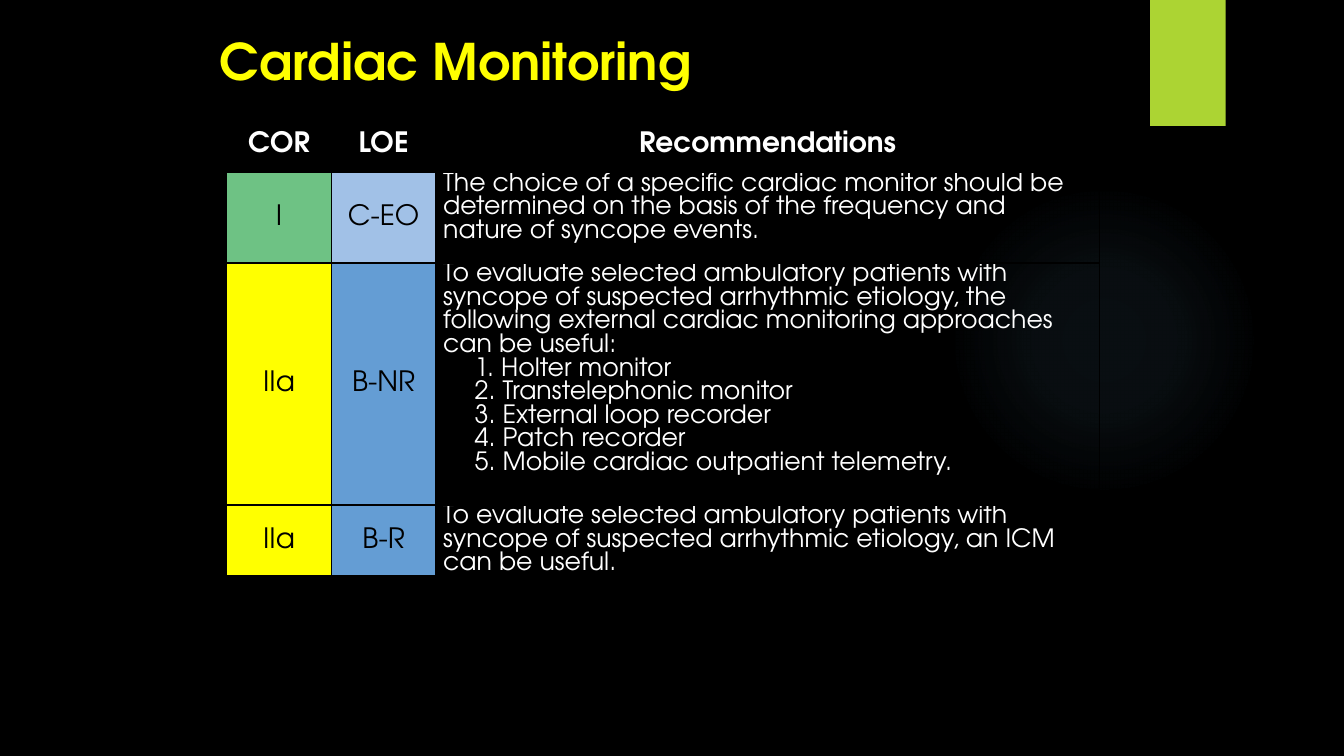
from dataclasses import dataclass

from lxml import etree
from pptx import Presentation
from pptx.dml.color import RGBColor
from pptx.enum.shapes import MSO_SHAPE
from pptx.enum.text import MSO_ANCHOR, MSO_AUTO_SIZE, PP_ALIGN
from pptx.oxml import parse_xml
from pptx.oxml.ns import nsdecls, qn
from pptx.slide import Slide
from pptx.table import Table, _Cell
from pptx.text.text import _Paragraph
from pptx.util import Pt

OVAL, RECTANGLE = MSO_SHAPE.OVAL, MSO_SHAPE.RECTANGLE
TOP, MIDDLE = MSO_ANCHOR.TOP, MSO_ANCHOR.MIDDLE
LEFT, CENTER = PP_ALIGN.LEFT, PP_ALIGN.CENTER

FONT = "TeX Gyre Adventor"
BLACK = RGBColor(0x00, 0x00, 0x00)
WHITE = RGBColor(0xFF, 0xFF, 0xFF)
YELLOW = RGBColor(0xFF, 0xFF, 0x00)
LIME = RGBColor(0xAC, 0xD4, 0x33)
GREEN = RGBColor(0x6E, 0xC2, 0x84)
PALE_BLUE = RGBColor(0xA1, 0xC1, 0xE7)
BLUE = RGBColor(0x64, 0x9D, 0xD4)
GLOW_BLUE = RGBColor(0x7A, 0xC4, 0xF0)

TITLE_ONLY_LAYOUT = 5
GLOW_STOPS = ((0, 7), (36, 6), (69, 0))  # position and opacity, percent
HEADINGS = ("COR", "LOE", "Recommendations")
COLUMN_WIDTHS = (74.7, 74.7, 474)
HEADER_HEIGHT = 38.9
LIST_INDENT = 22.5
BODY_LINE_SPACING = 16.85


@dataclass(frozen=True)
class Recommendation:
    strength: str
    strength_color: RGBColor
    evidence: str
    evidence_color: RGBColor
    height: float
    text: str
    monitors: tuple[str, ...] = ()


RECOMMENDATIONS = (
    Recommendation(
        "I", GREEN, "C-EO", PALE_BLUE, 64.8,
        "The choice of a specific cardiac monitor should be determined "
        "on the basis of the frequency and nature of syncope events.",
    ),
    Recommendation(
        "IIa", YELLOW, "B-NR", BLUE, 172.8,
        "To evaluate selected ambulatory patients with syncope of suspected "
        "arrhythmic etiology, the following external cardiac monitoring "
        "approaches can be useful:",
        ("Holter monitor", "Transtelephonic monitor", "External loop recorder",
         "Patch recorder", "Mobile cardiac outpatient telemetry."),
    ),
    Recommendation(
        "IIa", YELLOW, "B-R", BLUE, 47.5,
        "To evaluate selected ambulatory patients with syncope of suspected "
        "arrhythmic etiology, an ICM can be useful.",
    ),
)


def add_text(paragraph: _Paragraph, text: str, size: float, color: RGBColor,
             bold: bool = False, alignment: PP_ALIGN = LEFT) -> None:
    paragraph.alignment = alignment
    run = paragraph.add_run()
    run.text = text
    run.font.name = FONT
    run.font.size = Pt(size)
    run.font.bold = bold
    run.font.color.rgb = color


def add_glow(slide: Slide) -> None:
    """Add a faint round light that fades out towards its edge."""
    glow = slide.shapes.add_shape(OVAL, Pt(677.5), Pt(131.8), Pt(221.8), Pt(221.8))
    glow.shadow.inherit = False
    glow.line.fill.background()
    stops = "".join(
        f'<a:gs pos="{position * 1000}"><a:srgbClr val="{GLOW_BLUE}">'
        f'<a:alpha val="{opacity * 1000}"/></a:srgbClr></a:gs>'
        for position, opacity in GLOW_STOPS
    )
    gradient = parse_xml(
        f'<a:gradFill {nsdecls("a")}><a:gsLst>{stops}</a:gsLst><a:path path="circle">'
        '<a:fillToRect l="50000" t="50000" r="50000" b="50000"/></a:path></a:gradFill>'
    )
    glow.element.spPr.find(qn("a:prstGeom")).addnext(gradient)


def add_accent(slide: Slide) -> None:
    accent = slide.shapes.add_shape(RECTANGLE, Pt(821.5), Pt(0), Pt(54), Pt(90))
    accent.shadow.inherit = False
    accent.fill.solid()
    accent.fill.fore_color.rgb = LIME
    accent.line.fill.background()


def fill_title(slide: Slide) -> None:
    title = slide.shapes.title
    title.left, title.top, title.width, title.height = Pt(149.8), Pt(18), Pt(648), Pt(66)
    frame = title.text_frame
    frame.auto_size = MSO_AUTO_SIZE.NONE
    frame.vertical_anchor = TOP
    add_text(frame.paragraphs[0], "Cardiac Monitoring", 36, YELLOW, bold=True)


def format_cell(cell: _Cell, anchor: MSO_ANCHOR, fill: RGBColor | None = None) -> None:
    cell.margin_left = cell.margin_right = Pt(5.2)
    cell.margin_top = cell.margin_bottom = Pt(0)
    cell.vertical_anchor = anchor
    properties = cell._tc.get_or_add_tcPr()
    for side in ("lnL", "lnR", "lnT", "lnB"):
        border = etree.SubElement(properties, qn(f"a:{side}"), w=str(Pt(1)))
        solid = etree.SubElement(border, qn("a:solidFill"))
        etree.SubElement(solid, qn("a:srgbClr"), val=str(BLACK))
    if fill is None:
        cell.fill.background()
    else:
        cell.fill.solid()
        cell.fill.fore_color.rgb = fill


def fill_label(cell: _Cell, text: str, color: RGBColor,
               fill: RGBColor | None = None, bold: bool = False) -> None:
    format_cell(cell, MIDDLE, fill)
    add_text(cell.text_frame.paragraphs[0], text, 20, color, bold, CENTER)


def fill_recommendation(cell: _Cell, item: Recommendation) -> None:
    format_cell(cell, TOP)
    frame = cell.text_frame
    add_text(frame.paragraphs[0], item.text, 18, WHITE)
    for number, monitor in enumerate(item.monitors, start=1):
        paragraph = frame.add_paragraph()
        paragraph._p.get_or_add_pPr().set("marL", str(Pt(LIST_INDENT)))
        add_text(paragraph, f"{number}. {monitor}", 18, WHITE)
    for paragraph in frame.paragraphs:
        paragraph.line_spacing = Pt(BODY_LINE_SPACING)


def fill_table(table: Table) -> None:
    table.horz_banding = False
    for column, width in zip(table.columns, COLUMN_WIDTHS):
        column.width = Pt(width)
    table.rows[0].height = Pt(HEADER_HEIGHT)
    for index, heading in enumerate(HEADINGS):
        fill_label(table.cell(0, index), heading, WHITE, bold=True)
    for index, item in enumerate(RECOMMENDATIONS, start=1):
        table.rows[index].height = Pt(item.height)
        fill_label(table.cell(index, 0), item.strength, BLACK, item.strength_color)
        fill_label(table.cell(index, 1), item.evidence, BLACK, item.evidence_color)
        fill_recommendation(table.cell(index, 2), item)


def main() -> None:
    presentation = Presentation()
    presentation.slide_width, presentation.slide_height = Pt(960), Pt(540)
    slide = presentation.slides.add_slide(presentation.slide_layouts[TITLE_ONLY_LAYOUT])
    slide.background.fill.solid()
    slide.background.fill.fore_color.rgb = BLACK
    add_glow(slide)
    add_accent(slide)
    fill_title(slide)
    height = HEADER_HEIGHT + sum(item.height for item in RECOMMENDATIONS)
    frame = slide.shapes.add_table(
        len(RECOMMENDATIONS) + 1, len(HEADINGS),
        Pt(162), Pt(84.2), Pt(sum(COLUMN_WIDTHS)), Pt(height),
    )
    fill_table(frame.table)
    presentation.save("out.pptx")


if __name__ == "__main__":
    main()
